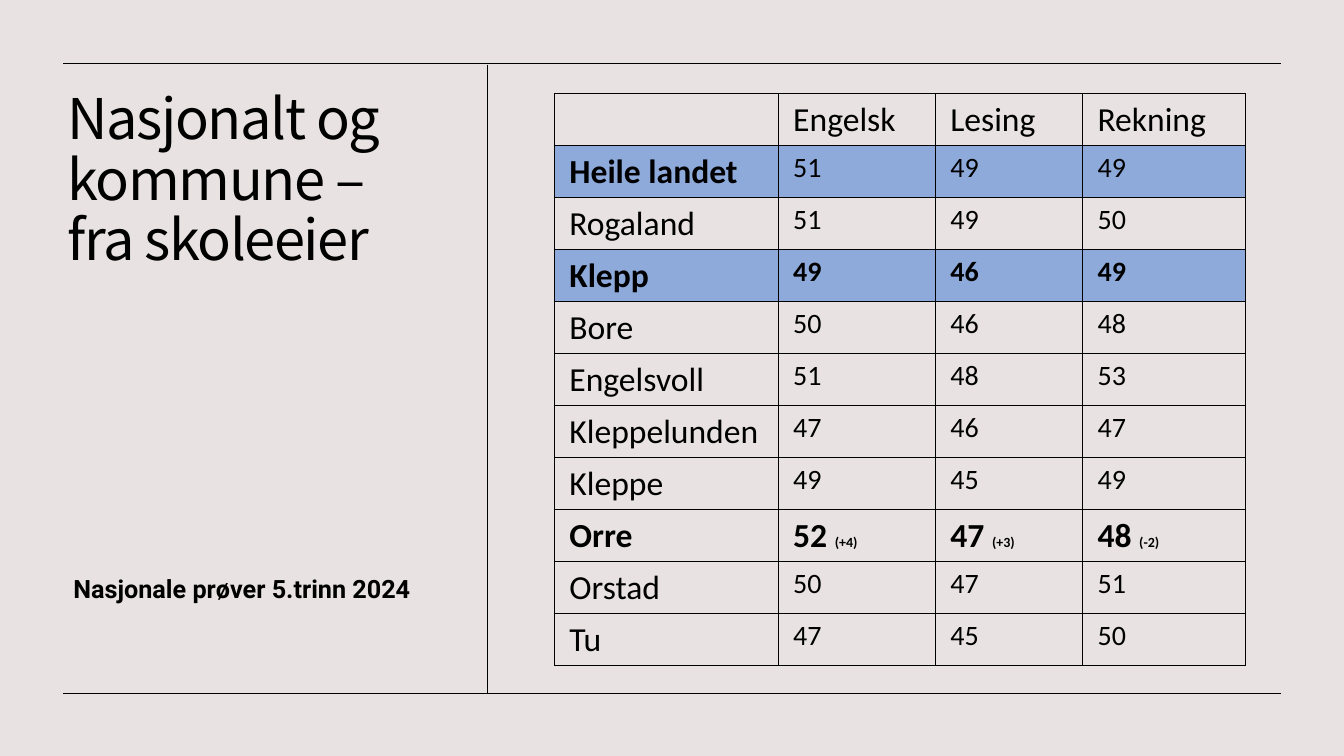
from pptx import Presentation
from pptx.dml.color import RGBColor
from pptx.enum.shapes import MSO_CONNECTOR
from pptx.enum.text import MSO_ANCHOR, MSO_AUTO_SIZE, PP_ALIGN
from pptx.oxml.ns import qn
from pptx.util import Cm, Pt
from lxml.etree import SubElement

BLACK = RGBColor(0, 0, 0)
SAND = RGBColor(0xE8, 0xE3, 0xE2)
BLUE = RGBColor(0x8E, 0xAA, 0xDB)

SUBJECTS = ["", "Engelsk", "Lesing", "Rekning"]
RESULTS = [
    ("Heile landet", 51, 49, 49),
    ("Rogaland", 51, 49, 50),
    ("Klepp", 49, 46, 49),
    ("Bore", 50, 46, 48),
    ("Engelsvoll", 51, 48, 53),
    ("Kleppelunden", 47, 46, 47),
    ("Kleppe", 49, 45, 49),
    ("Orre", 52, 47, 48),
    ("Orstad", 50, 47, 51),
    ("Tu", 47, 45, 50),
]
CHANGES = {"Orre": ["", "(+4)", "(+3)", "(-2)"]}
SHADED = {"Heile landet", "Klepp"}
BOLD_NAMES = {"Heile landet", "Klepp", "Orre"}
BOLD_SCORES = {"Klepp", "Orre"}
COL_WIDTHS = [5.64, 3.96, 3.71, 4.11]
ROW_HEIGHT = 1.31


class SlideBuilder:
    """Draws styled elements on one slide; lengths are in centimetres."""

    def __init__(self, prs):
        self.s = prs.slides.add_slide(prs.slide_layouts[5])
        self.s.background.fill.solid()
        self.s.background.fill.fore_color.rgb = SAND

    def font(self, p, name, size, bold=False):
        p.font.name, p.font.size, p.font.bold = name, Pt(size), bold
        p.font.color.rgb = BLACK

    def title(self, text, x, y, w, h):
        sp = self.s.shapes.title
        sp.left, sp.top, sp.width, sp.height = Cm(x), Cm(y), Cm(w), Cm(h)
        tf = sp.text_frame
        tf.auto_size, tf.vertical_anchor = MSO_AUTO_SIZE.NONE, MSO_ANCHOR.TOP
        p = tf.paragraphs[0]
        p.alignment, p.line_spacing = PP_ALIGN.LEFT, 0.9
        self.font(p, "Noto Sans CJK KR", 40)
        r = p.add_run()
        r.text = text
        r._r.get_or_add_rPr().set("spc", "-100")

    def caption(self, text, x, y, w, h, bottom):
        tf = self.s.shapes.add_textbox(Cm(x), Cm(y), Cm(w), Cm(h)).text_frame
        tf.word_wrap, tf.vertical_anchor = True, MSO_ANCHOR.BOTTOM
        tf.margin_bottom = Cm(bottom)
        p = tf.paragraphs[0]
        p.text, p.line_spacing, p.space_after = text, 1.2, Pt(6)
        self.font(p, "Roboto", 18, True)

    def line(self, x1, y1, x2, y2):
        c = self.s.shapes.add_connector(
            MSO_CONNECTOR.STRAIGHT, Cm(x1), Cm(y1), Cm(x2), Cm(y2))
        c.line.color.rgb, c.line.width = BLACK, Pt(0.5)
        SubElement(c._element.spPr, qn("a:effectLst"))

    def table(self, x, y, widths, row_height, n_rows):
        tbl = self.s.shapes.add_table(
            n_rows, len(widths), Cm(x), Cm(y),
            Cm(sum(widths)), Cm(row_height * n_rows)).table
        tbl.first_row = tbl.horz_banding = False
        for col, width in zip(tbl.columns, widths):
            col.width = Cm(width)
        for row in tbl.rows:
            row.height = Cm(row_height)
        return tbl

    def cell(self, cell, text, size, bold=False, fill=None, note=""):
        cell.margin_left = cell.margin_right = Cm(0.38)
        cell.margin_top = cell.margin_bottom = 0
        self.borders(cell)
        if fill is None:
            cell.fill.background()
        else:
            cell.fill.solid()
            cell.fill.fore_color.rgb = fill
        p = cell.text_frame.paragraphs[0]
        p.line_spacing, p.space_before, p.space_after = 1.15, Pt(5), Pt(10)
        self.font(p, "Calibri", size, bold)
        if text:
            p.add_run().text = text
        if note:
            p.runs[0].text += " "
            r = p.add_run()
            r.text, r.font.size = note, Pt(10)

    def borders(self, cell):
        tc_pr = cell._tc.get_or_add_tcPr()
        for side in ("lnL", "lnR", "lnT", "lnB"):
            ln = SubElement(tc_pr, qn(f"a:{side}"), w=str(Pt(1)))
            fill = SubElement(ln, qn("a:solidFill"))
            SubElement(fill, qn("a:srgbClr"), val=str(BLACK))


def main():
    prs = Presentation()
    prs.slide_width, prs.slide_height = Cm(33.87), Cm(19.05)
    b = SlideBuilder(prs)
    b.title("Nasjonalt og kommune – fra skoleeier", 1.45, 2.18, 9.75, 5.59)
    b.line(32.28, 1.6, 1.58, 1.6)
    b.caption("Nasjonale prøver 5.trinn 2024", 1.6, 8.51, 9.1, 7.92, 1.22)
    b.line(12.28, 1.63, 12.28, 17.48)
    b.line(32.28, 17.48, 1.58, 17.48)

    tbl = b.table(13.97, 2.36, COL_WIDTHS, ROW_HEIGHT, len(RESULTS) + 1)
    for j, subject in enumerate(SUBJECTS):
        b.cell(tbl.cell(0, j), subject, 24)
    for i, (name, *scores) in enumerate(RESULTS, start=1):
        fill = BLUE if name in SHADED else None
        notes = CHANGES.get(name, [""] * len(SUBJECTS))
        b.cell(tbl.cell(i, 0), name, 24, name in BOLD_NAMES, fill)
        for j, score in enumerate(scores, start=1):
            size = 24 if notes[j] else 20
            b.cell(tbl.cell(i, j), str(score), size,
                   name in BOLD_SCORES, fill, notes[j])
    prs.save("out.pptx")


if __name__ == "__main__":
    main()
